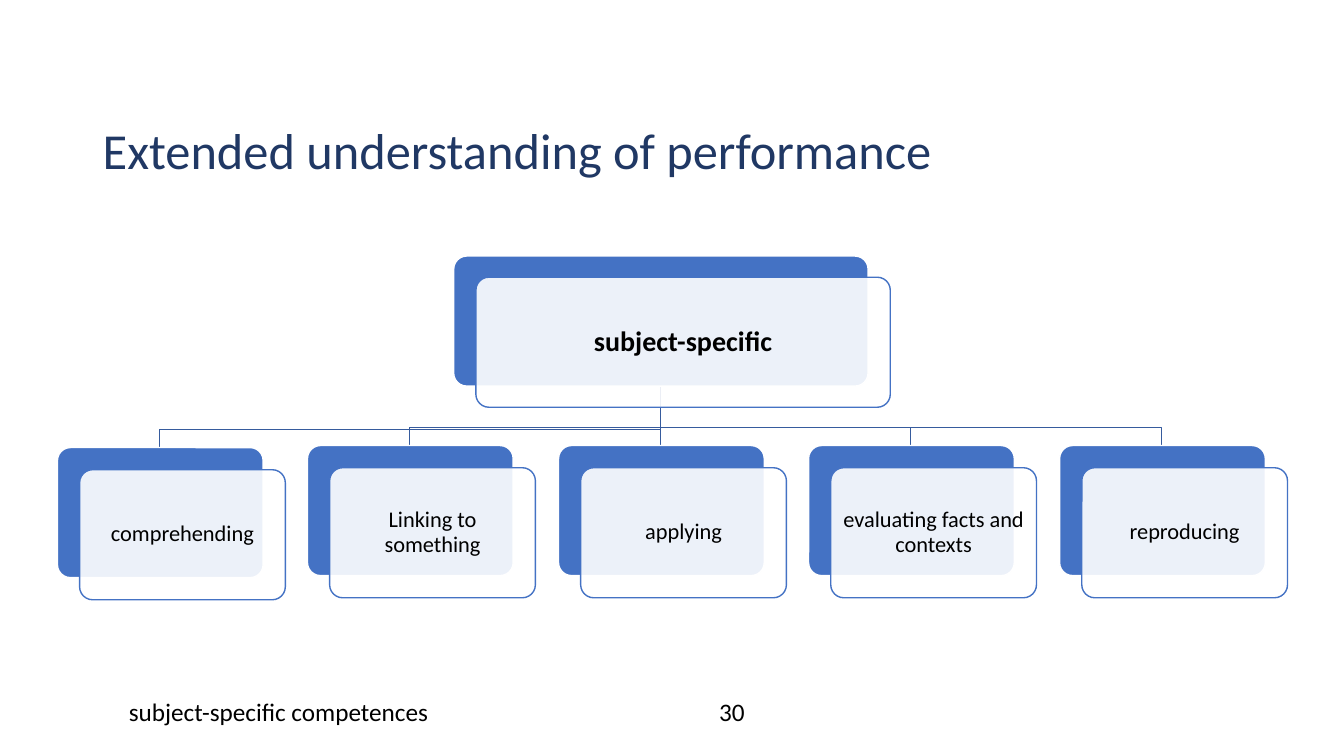
"""Builds the slide on the extended understanding of performance."""
from lxml import etree
from pptx import Presentation
from pptx.dml.color import RGBColor
from pptx.enum.shapes import MSO_CONNECTOR, MSO_SHAPE
from pptx.enum.text import MSO_ANCHOR, PP_ALIGN
from pptx.oxml.ns import qn
from pptx.util import Pt

PX = 9144
STRAIGHT = MSO_CONNECTOR.STRAIGHT
ROUNDED = MSO_SHAPE.ROUNDED_RECTANGLE
MIDDLE, TOP = MSO_ANCHOR.MIDDLE, MSO_ANCHOR.TOP
LEFT, CENTER = PP_ALIGN.LEFT, PP_ALIGN.CENTER
THEME = {
    "font": "Calibri",
    "title": RGBColor(0x20, 0x38, 0x64),
    "text": RGBColor(0, 0, 0),
    "accent": RGBColor(0x44, 0x72, 0xC4),
    "branch": RGBColor(0x36, 0x5B, 0x9D),
    "white": RGBColor(0xFF, 0xFF, 0xFF),
    "title_size": 36,
    "footer_size": 18,
    "root_size": 20,
    "card_size": 16,
}


def write(shape, text, size, color, align, spacing=1.0, bold=False):
    """Put one styled paragraph into a shape."""
    shape.text_frame.word_wrap = True
    para = shape.text_frame.paragraphs[0]
    para.alignment = align
    para.line_spacing = spacing
    span = para.add_run()
    span.text = text
    span.font.name = THEME["font"]
    span.font.size = Pt(size)
    span.font.bold = bold
    span.font.color.rgb = color


def add_card(page, text, left, top, width, drop, size, inset, bold=False):
    """Draw a solid card with a translucent, labelled card in front."""
    layers = ((0, 0, "accent", "white"), (22, drop, "white", "accent"))
    for right, down, fill, line in layers:
        card = page.shapes.add_shape(
            ROUNDED, (left + right) * PX, (top + down) * PX, width * PX, 129 * PX)
        card.adjustments[0] = 0.1
        card.shadow.inherit = False
        card.fill.solid()
        card.fill.fore_color.rgb = THEME[fill]
        card.line.color.rgb = THEME[line]
        card.line.width = Pt(1)
    color = card.fill._xPr.find(qn("a:solidFill"))[0]
    etree.SubElement(color, qn("a:alpha"), val="90000")
    frame = card.text_frame
    frame.vertical_anchor = MIDDLE
    frame.margin_left = frame.margin_right = inset * PX
    frame.margin_top = frame.margin_bottom = inset * PX
    write(card, text, size, THEME["text"], CENTER, 0.9, bold)


deck = Presentation()
deck.slide_width, deck.slide_height = 1333 * PX, 750 * PX
page = deck.slides.add_slide(deck.slide_layouts[6])

labels = [
    ("Extended understanding of performance", 92, 120, 1150, 97, "title", LEFT, 0.9),
    ("subject-specific competences", 118, 686, 450, 40, "footer", LEFT, 1.0),
    ("30", 576, 686, 300, 40, "footer", CENTER, 1.0),
]
for text, left, top, width, height, role, align, spacing in labels:
    box = page.shapes.add_textbox(left * PX, top * PX, width * PX, height * PX)
    box.text_frame.vertical_anchor = TOP
    color = THEME["title"] if role == "title" else THEME["text"]
    write(box, text, THEME[role + "_size"], color, align, spacing)

competences = ["comprehending", "Linking to something", "applying",
               "evaluating facts and contexts", "reproducing"]
cards = [(text, 57 + index * 994 // 4, 444 if index == 0 else 442)
         for index, text in enumerate(competences)]
stem_x, stem_y = 655, 383

for text, left, top in reversed(cards):
    center = left + 101
    if center == stem_x:
        branch = page.shapes.add_connector(
            STRAIGHT, stem_x * PX, stem_y * PX, center * PX, top * PX)
        etree.SubElement(branch._element.spPr, qn("a:effectLst"))
    else:
        bend = top - 18
        outline = page.shapes.build_freeform(stem_x, stem_y, scale=PX)
        outline.add_line_segments(
            [(stem_x, bend), (center, bend), (center, top)], close=False)
        branch = outline.convert_to_shape()
        branch.fill.background()
        branch.shadow.inherit = False
    branch.line.color.rgb = THEME["branch"]
    branch.line.width = Pt(1)

add_card(page, "subject-specific", 450, 254, 411, 21, THEME["root_size"], 8, True)
for text, left, top in cards:
    add_card(page, text, left, top, 204, 22, THEME["card_size"], 7)

deck.save("out.pptx")
